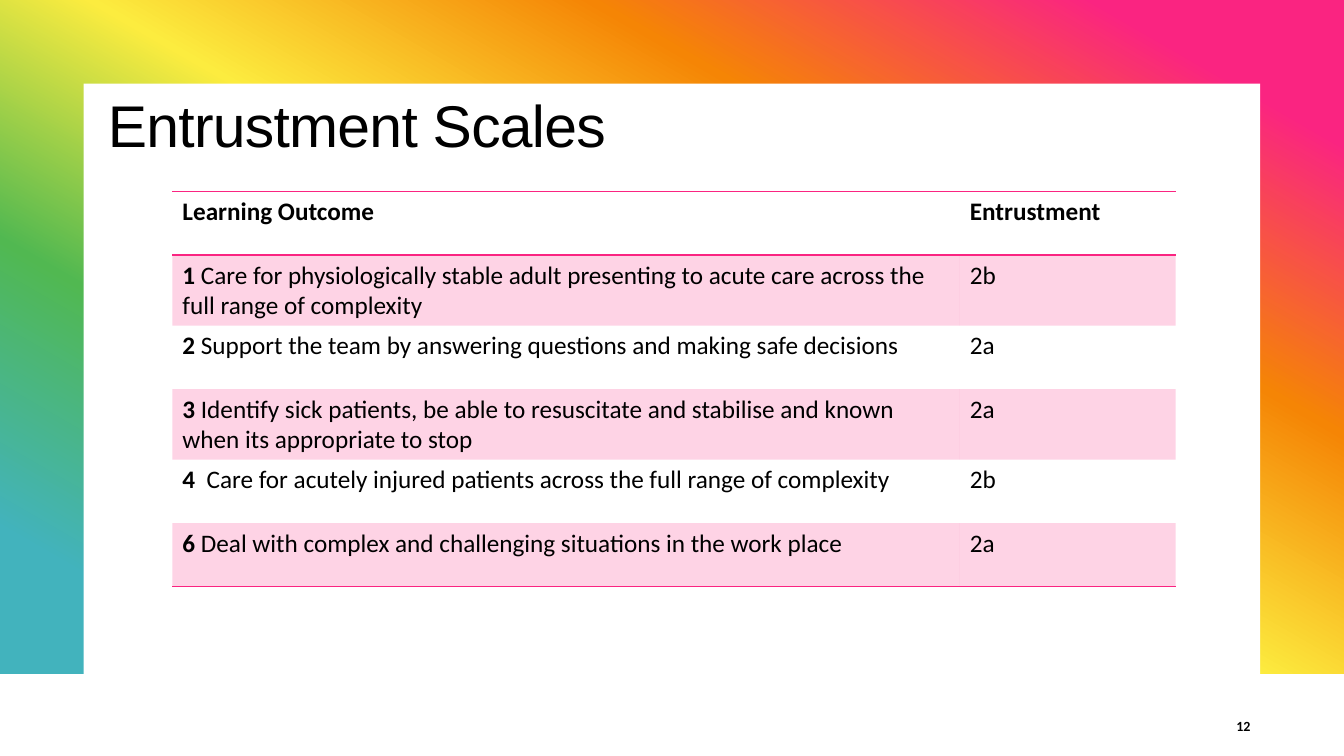
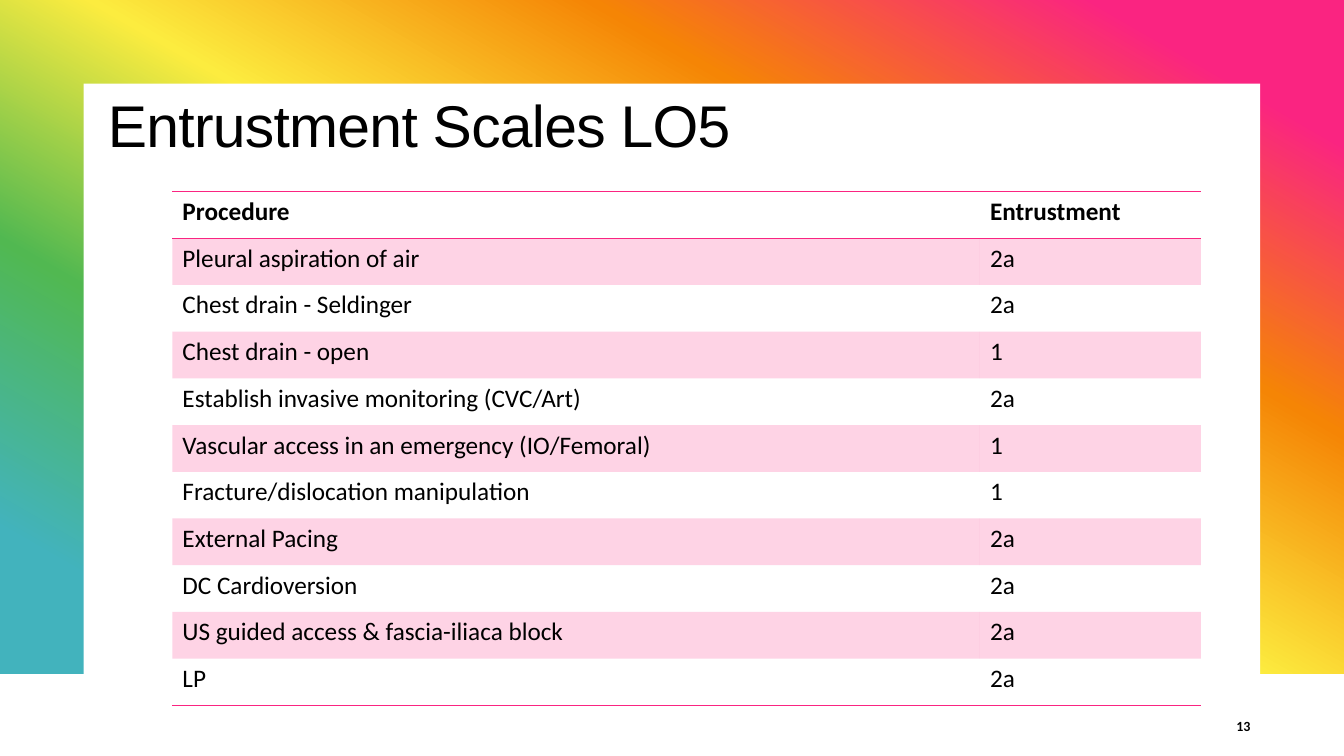
from lxml import etree
from pptx import Presentation
from pptx.dml.color import RGBColor
from pptx.enum.shapes import MSO_SHAPE as SHAPE
from pptx.enum.text import MSO_ANCHOR as ANCHOR, MSO_AUTO_SIZE as AUTO, PP_ALIGN as ALIGN
from pptx.oxml.ns import qn
from pptx.util import Inches, Pt

COLORS = {
    "text": "000000", "white": "FFFFFF", "pink": "FA2481", "orange": "F58505",
    "yellow": "FCEC3F", "green": "51B851", "teal": "42B3BD",
}
RAINBOW = [(10, "pink"), (30, "orange"), (50, "yellow"), (70, "green"), (90, "teal")]
TITLE_FONT, BODY_FONT = "Arial", "Calibri"
SLIDE_W, SLIDE_H = 13.33, 7.5
PLAIN_TABLE = "{2D5ABB26-0587-4C30-8999-92F81FD0307C}"

# Rows hold the bold lead, the plain wording and the entrustment level
OUTCOMES = [
    ("1", " Care for physiologically stable adult presenting to acute care across the "
          "full range of complexity", "2b"),
    ("2 ", "Support the team by answering questions and making safe decisions", "2a"),
    ("3 ", "Identify sick patients, be able to resuscitate and stabilise and known "
           "when its appropriate to stop", "2a"),
    ("4 ", " Care for acutely injured patients across the full range of complexity", "2b"),
    ("6", " Deal with complex and challenging situations in the work place", "2a"),
]
PROCEDURES = [
    ("", "Pleural aspiration of air", "2a"),
    ("", "Chest drain - Seldinger", "2a"),
    ("", "Chest drain - open", "1"),
    ("", "Establish invasive monitoring (CVC/Art)", "2a"),
    ("", "Vascular access in an emergency (IO/Femoral)", "1"),
    ("", "Fracture/dislocation manipulation", "1"),
    ("", "External Pacing", "2a"),
    ("", "DC Cardioversion", "2a"),
    ("", "US guided access & fascia-iliaca block", "2a"),
    ("", "LP", "2a"),
]


def rgb(name):
    return RGBColor.from_string(COLORS[name])


def add_xml(parent, tag, **attrs):
    return etree.SubElement(parent, qn(tag), attrs)


def place(shape, box):
    shape.left, shape.top, shape.width, shape.height = map(Inches, box)


def add_run(p, text, size, font=BODY_FONT, bold=False):
    r = p.add_run()
    r.text = text
    r.font.size, r.font.name, r.font.bold = Pt(size), font, bold
    r.font.color.rgb = rgb("text")
    return r


def add_rect(s, box):
    sp = s.shapes.add_shape(SHAPE.RECTANGLE, *map(Inches, box))
    sp.shadow.inherit = False
    sp.line.fill.background()
    return sp


def fill_rainbow(sp):
    sp.fill.gradient()
    grad = sp._element.spPr.find(qn("a:gradFill"))
    stops = grad.find(qn("a:gsLst"))
    for stop in list(stops):
        stops.remove(stop)
    for pos, name in RAINBOW:
        stop = add_xml(stops, "a:gs", pos=str(pos * 1000))
        add_xml(stop, "a:srgbClr", val=COLORS[name])
    grad.find(qn("a:lin")).set("ang", str(120 * 60000))


def move_to_layout(sp, layout, index):
    layout.shapes._spTree.insert(index, sp._element)


def build_frame(s, layout):
    """Rainbow backdrop with a white panel, shared through the layout."""
    backdrop = add_rect(s, (0, 0, SLIDE_W, 6.68))
    fill_rainbow(backdrop)
    panel = add_rect(s, (0.83, 0.83, 11.67, 6.07))
    panel.fill.solid()
    panel.fill.fore_color.rgb = rgb("white")
    for index, sp in enumerate((backdrop, panel), start=2):
        move_to_layout(sp, layout, index)


def add_title(s, text, box):
    title = s.shapes.title
    place(title, box)
    tf = title.text_frame
    tf.word_wrap, tf.auto_size, tf.vertical_anchor = True, AUTO.NONE, ANCHOR.TOP
    p = tf.paragraphs[0]
    p.alignment, p.line_spacing = ALIGN.LEFT, 0.95
    r = add_run(p, text, 42, TITLE_FONT)
    r.font._element.set("spc", "-50")


def add_page_number(s, number, box):
    tf = s.shapes.add_textbox(*map(Inches, box)).text_frame
    tf.word_wrap, tf.vertical_anchor = True, ANCHOR.MIDDLE
    p = tf.paragraphs[0]
    p.alignment = ALIGN.RIGHT
    add_run(p, str(number), 10, bold=True)


def style_cell(cell, edges, shaded):
    tc_pr = cell._tc.get_or_add_tcPr()
    for edge in edges:
        ln = add_xml(tc_pr, edge, w=str(Pt(1)))
        add_xml(add_xml(ln, "a:solidFill"), "a:srgbClr", val=COLORS["pink"])
    if not shaded:
        cell.fill.background()
        return
    cell.fill.solid()
    cell.fill.fore_color.rgb = rgb("pink")
    add_xml(tc_pr.find(qn("a:solidFill")).find(qn("a:srgbClr")), "a:alpha", val="20000")


def add_scale_table(s, heading, rows, box, level_width):
    rows = [(heading, "", "Entrustment")] + rows
    table_shape = s.shapes.add_table(len(rows), 2, *map(Inches, box))
    table = table_shape.table
    table.first_row = table.horz_banding = False
    table._tbl.tblPr.find(qn("a:tableStyleId")).text = PLAIN_TABLE
    table.columns[0].width = Inches(box[2] - level_width)
    table.columns[1].width = Inches(level_width)

    for i, (lead, wording, level) in enumerate(rows):
        header, last = i == 0, i == len(rows) - 1
        edges = ["a:lnT", "a:lnB"] if header else ["a:lnB"] if last else []
        name_cell, level_cell = table.cell(i, 0), table.cell(i, 1)
        p = name_cell.text_frame.paragraphs[0]
        for text, bold in ((lead, True), (wording, False)):
            if text:
                add_run(p, text, 18, bold=bold)
        add_run(level_cell.text_frame.paragraphs[0], level, 18, bold=header)
        for cell in (name_cell, level_cell):
            style_cell(cell, edges, shaded=i % 2 == 1)


def build_scale_slide(s, number, title, heading, rows, table_box, level_width):
    add_title(s, title, (0.97, 0.88, 8, 1))
    add_page_number(s, number, (11.92, 7, 0.58, 0.4))
    add_scale_table(s, heading, rows, table_box, level_width)


def main():
    prs = Presentation()
    prs.slide_width, prs.slide_height = Inches(SLIDE_W), Inches(SLIDE_H)
    layout = prs.slide_layouts[5]
    outcomes, procedures = (prs.slides.add_slide(layout) for _ in range(2))
    build_frame(outcomes, layout)
    build_scale_slide(outcomes, 12, "Entrustment Scales", "Learning Outcome",
                      OUTCOMES, (1.71, 1.9, 9.95, 3.78), 2.14)
    build_scale_slide(procedures, 13, "Entrustment Scales LO5", "Procedure",
                      PROCEDURES, (1.71, 1.9, 10.2, 5.1), 2.19)
    prs.save("out.pptx")


if __name__ == "__main__":
    main()
